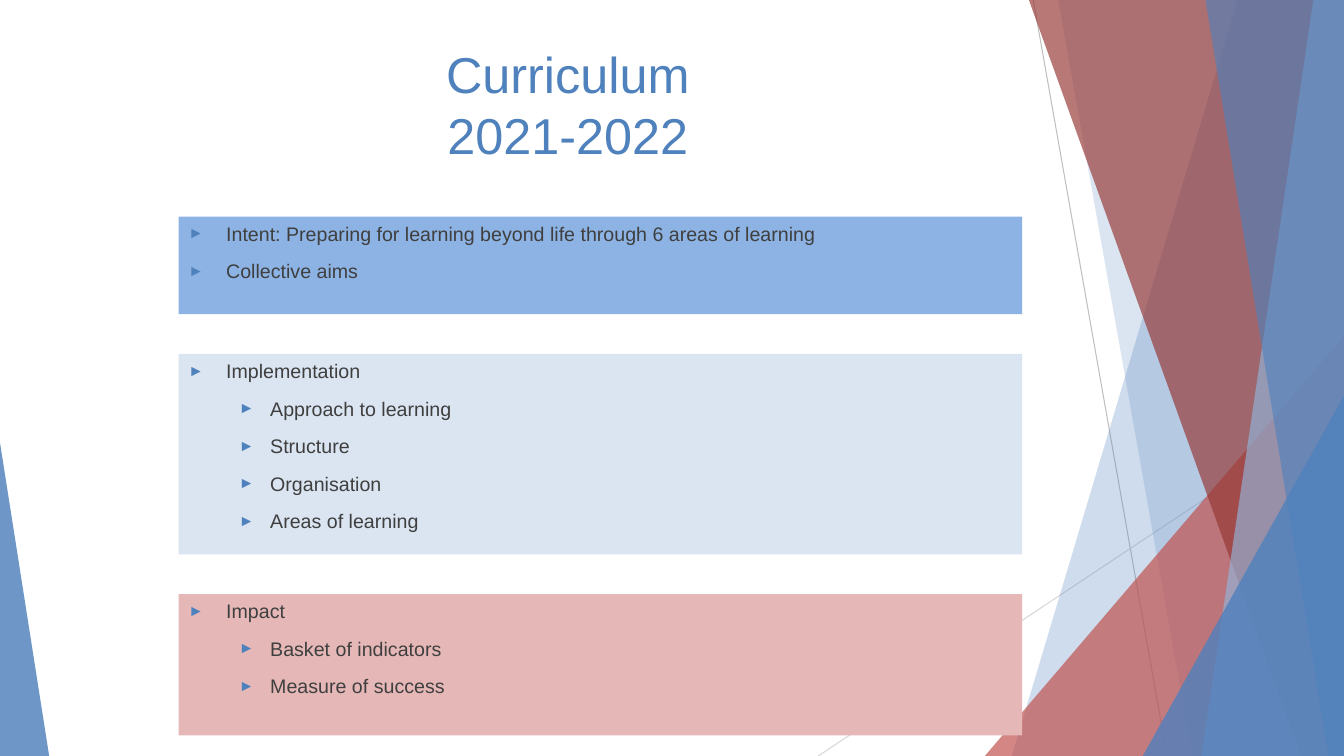
from lxml.etree import SubElement
from pptx import Presentation
from pptx.dml.color import RGBColor
from pptx.enum.shapes import MSO_CONNECTOR, MSO_SHAPE
from pptx.enum.text import MSO_ANCHOR, PP_ALIGN
from pptx.oxml.ns import qn
from pptx.util import Cm, Pt

WIDE, HIGH = 33.87, 19.05
HUES = {
    "blue": "4F81BD", "red": "C0504D", "dark": "953734", "pale": "93B3D7",
    "text": "3F3F3F", "grey": "BFBFBF", "light": "D8D8D8",
    "intent": "8CB3E3", "plan": "DAE5F1", "impact": "E5B8B7",
}
FRAME = {
    "word_wrap": True, "vertical_anchor": MSO_ANCHOR.TOP,
    "margin_left": Cm(0.25), "margin_right": Cm(0.25),
    "margin_top": Cm(0.13), "margin_bottom": Cm(0.13),
}
TITLE = {"name": "Arial", "size": Pt(36)}
BODY = {"name": "Arial", "size": Pt(14)}
INDENT = [(0.95, -0.95), (2.06, -0.79)]
BOXES = [
    ("intent", 2.46, [
        (0, "Intent: Preparing for learning beyond life through 6 areas of learning"),
        (0, "Collective aims"),
    ]),
    ("plan", 5.05, [
        (0, "Implementation"), (1, "Approach to learning"), (1, "Structure"),
        (1, "Organisation"), (1, "Areas of learning"),
    ]),
    ("impact", 3.56, [
        (0, "Impact"), (1, "Basket of indicators"), (1, "Measure of success"),
    ]),
]


def apply(item, values):
    for name, value in values.items():
        setattr(item, name, value)


def hue(name):
    return RGBColor.from_string(HUES[name])


def paint(shape, name, alpha=100):
    shape.shadow.inherit = False
    shape.line.fill.background()
    shape.fill.solid()
    shape.fill.fore_color.rgb = hue(name)
    if alpha < 100:
        color = shape.fill._xPr.find(qn("a:solidFill"))[0]
        SubElement(color, qn("a:alpha"), val=str(alpha * 1000))


def add_line(slide, start, end, name):
    points = [Cm(v) for v in (*start, *end)]
    line = slide.shapes.add_connector(MSO_CONNECTOR.STRAIGHT, *points)
    line.line.width = Pt(0.75)
    line.line.color.rgb = hue(name)
    SubElement(line._element.spPr, qn("a:effectLst"))


def add_band(slide, top, foot, name, alpha):
    pen = slide.shapes.build_freeform(Cm(top), 0)
    corners = [(WIDE, 0), (WIDE, HIGH), (foot, HIGH)]
    pen.add_line_segments([(Cm(x), Cm(y)) for x, y in corners])
    paint(pen.convert_to_shape(), name, alpha)


def add_peak(slide, left, top, width, tip, name, alpha):
    area = [Cm(v) for v in (left, top, width, HIGH - top)]
    peak = slide.shapes.add_shape(MSO_SHAPE.ISOSCELES_TRIANGLE, *area)
    peak.adjustments[0] = tip
    paint(peak, name, alpha)


def add_title(slide, text):
    box = slide.shapes.add_textbox(Cm(6.22), Cm(0.79), Cm(16.18), Cm(3.66))
    frame = box.text_frame
    apply(frame, {**FRAME, "vertical_anchor": MSO_ANCHOR.MIDDLE})
    para = frame.paragraphs[0]
    para.text = text
    para.alignment = PP_ALIGN.CENTER
    for run in para.runs:
        apply(run.font, TITLE)
        run.font.color.rgb = hue("blue")


def add_bullet(para, level):
    left, hang = INDENT[level]
    props = para._p.get_or_add_pPr()
    props.set("marL", str(Cm(left)))
    props.set("indent", str(Cm(hang)))
    color = SubElement(props, qn("a:buClr"))
    SubElement(color, qn("a:srgbClr"), val=HUES["blue"])
    SubElement(props, qn("a:buSzPct"), val="80000")
    SubElement(props, qn("a:buFont"), typeface="Arial")
    SubElement(props, qn("a:buChar"), char="►")


def add_box(slide, top, height, name, items):
    area = [Cm(v) for v in (4.5, top, 21.26, height)]
    box = slide.shapes.add_shape(MSO_SHAPE.RECTANGLE, *area)
    paint(box, name)
    frame = box.text_frame
    apply(frame, FRAME)
    for index, (level, text) in enumerate(items):
        para = frame.add_paragraph() if index else frame.paragraphs[0]
        para.text = text
        apply(para, {"level": level, "alignment": PP_ALIGN.LEFT,
                     "space_before": Pt(10 if index else 0)})
        apply(para.runs[0].font, BODY)
        para.runs[0].font.color.rgb = hue("text")
        add_bullet(para, level)


def main():
    deck = Presentation()
    apply(deck, {"slide_width": Cm(WIDE), "slide_height": Cm(HIGH)})
    slide = deck.slides.add_slide(deck.slide_layouts[6])

    add_line(slide, (26.04, 0), (29.41, HIGH), "grey")
    add_line(slide, (WIDE, 10.24), (20.62, HIGH), "light")
    add_band(slide, 31.19, 25.5, "blue", 27)
    add_band(slide, 26.67, 30.05, "blue", 20)
    add_peak(slide, 24.82, 8.46, 9.05, 1, "red", 69)
    add_band(slide, 25.93, 32.79, "dark", 67)
    add_band(slide, 33.1, 30.28, "pale", 67)
    add_band(slide, 30.38, 33.48, "blue", 62)
    add_peak(slide, 28.8, 9.98, 5.07, 1, "blue", 80)
    add_peak(slide, 0, 11.15, 1.24, 0, "blue", 82)

    add_title(slide, "Curriculum\v2021-2022")
    top = 5.46
    for name, height, items in BOXES:
        add_box(slide, top, height, name, items)
        top += height + 1
    deck.save("out.pptx")


if __name__ == "__main__":
    main()
